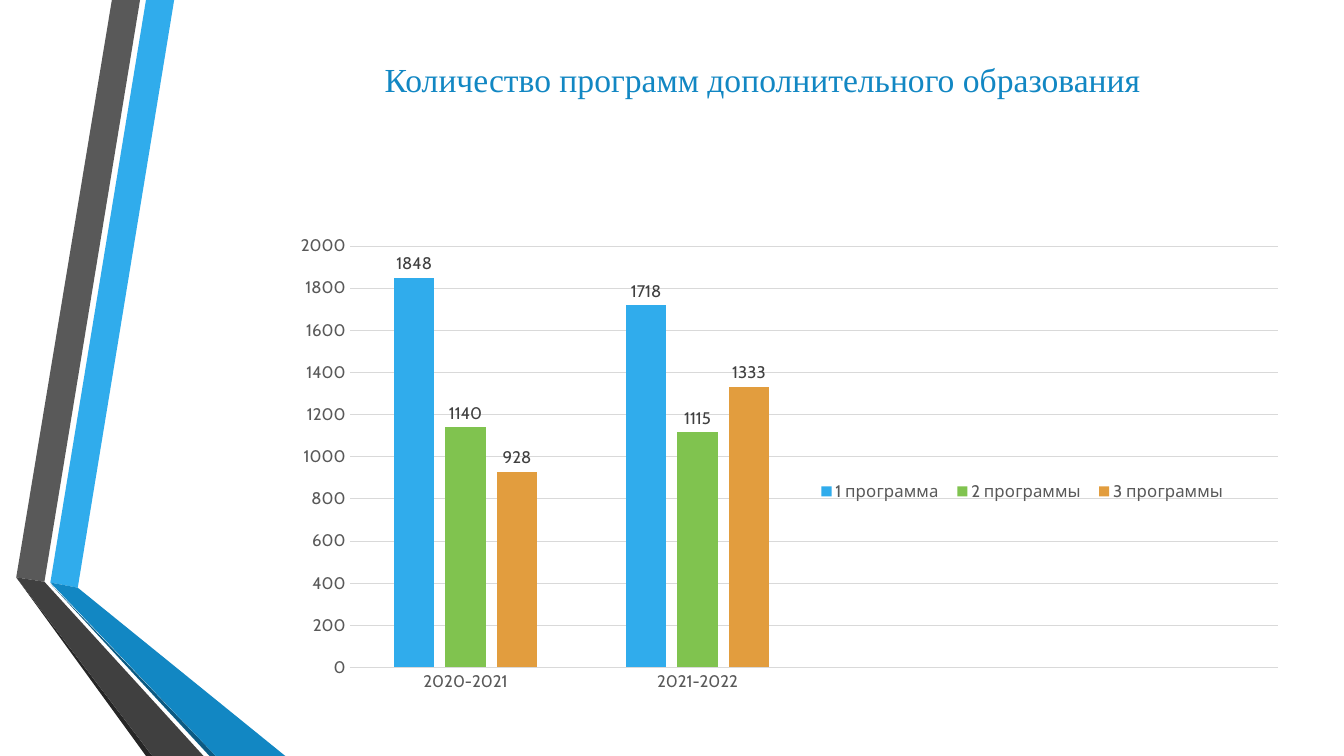
import pptx
import pptx.chart.data
import pptx.dml.color
import pptx.enum.chart
import pptx.enum.text
import pptx.oxml
import pptx.oxml.ns
import pptx.util

Cm = pptx.util.Cm
Pt = pptx.util.Pt
COLORS = {
    "blue": "30ACEC", "mid_blue": "1287C3", "deep_blue": "0C5A82",
    "gray": "595959", "dark_gray": "404040", "black_gray": "262626",
    "green": "80C34F", "orange": "E29D3E", "grid": "D9D9D9",
}


def rgb(name):
    return pptx.dml.color.RGBColor.from_string(COLORS[name])


def apply(target, values):
    for name, value in values.items():
        setattr(target, name, value)


class SlideMaker:
    chart_font = "Cabin"
    title_font = "Times New Roman"

    def __init__(self, s):
        self.s = s

    def font(self, font, name, size, color):
        apply(font, {"name": name, "size": Pt(size), "bold": False})
        font.color.rgb = rgb(color)

    def polygon(self, points, color):
        start, *rest = [(Cm(x), Cm(y)) for x, y in points]
        builder = self.s.shapes.build_freeform(*start)
        builder.add_line_segments(rest, close=True)
        sp = builder.convert_to_shape()
        sp.shadow.inherit = False
        sp.fill.solid()
        sp.fill.fore_color.rgb = rgb(color)
        sp.line.fill.background()

    def title(self, text, box):
        sp = self.s.shapes.add_textbox(*map(Cm, box))
        tf = sp.text_frame
        tf.word_wrap = True
        p = tf.paragraphs[0]
        p.alignment = pptx.enum.text.PP_ALIGN.CENTER
        r = p.add_run()
        r.text = text
        self.font(r.font, self.title_font, 24, "mid_blue")

    def place(self, part, index, box, inner=False):
        """Set a manual layout, in fractions of the chart area."""
        for old in part.findall(pptx.oxml.ns.qn("c:layout")):
            part.remove(old)
        target = '<c:layoutTarget val="inner"/>' if inner else ""
        modes = '<c:xMode val="edge"/><c:yMode val="edge"/>'
        sizes = "".join(f'<c:{k} val="{v}"/>' for k, v in zip("xywh", box))
        part.insert(index, pptx.oxml.parse_xml(
            f'<c:layout {pptx.oxml.ns.nsdecls("c")}><c:manualLayout>'
            f"{target}{modes}{sizes}</c:manualLayout></c:layout>"))

    def columns(self, categories, series, box, plot_box, legend_box):
        enum = pptx.enum.chart
        data = pptx.chart.data.CategoryChartData()
        data.categories = categories
        for name, values, _ in series:
            data.add_series(name, values)
        chart = self.s.shapes.add_chart(
            enum.XL_CHART_TYPE.COLUMN_CLUSTERED, *map(Cm, box), data).chart
        chart.has_title = False
        self.font(chart.font, self.chart_font, 12, "gray")

        # Columns and their labels
        plot = chart.plots[0]
        apply(plot, {"gap_width": 219, "overlap": -27,
                     "vary_by_categories": False})
        for ser, (_, _, color) in zip(plot.series, series):
            ser.format.fill.solid()
            ser.format.fill.fore_color.rgb = rgb(color)
            labels = ser.data_labels
            apply(labels, {"show_value": True,
                           "position": enum.XL_LABEL_POSITION.OUTSIDE_END})
            self.font(labels.font, self.chart_font, 12, "dark_gray")

        # Axes
        none = enum.XL_TICK_MARK.NONE
        for axis in (chart.category_axis, chart.value_axis):
            apply(axis, {"major_tick_mark": none, "minor_tick_mark": none})
            self.font(axis.tick_labels.font, self.chart_font, 12, "gray")
        apply(chart.value_axis, {"minimum_scale": 0, "maximum_scale": 2000,
                                 "major_unit": 200})
        chart.value_axis.format.line.fill.background()
        for part in (chart.category_axis, chart.value_axis.major_gridlines):
            part.format.line.width = Pt(0.75)
            part.format.line.color.rgb = rgb("grid")

        # Legend and plot area
        chart.has_legend = True
        legend = chart.legend
        apply(legend, {"position": enum.XL_LEGEND_POSITION.BOTTOM,
                       "include_in_layout": False})
        self.font(legend.font, self.chart_font, 12, "gray")
        plot_area = chart.element.find(".//" + pptx.oxml.ns.qn("c:plotArea"))
        self.place(plot_area, 0, plot_box, inner=True)
        self.place(chart.element.find(".//" + pptx.oxml.ns.qn("c:legend")),
                   1, legend_box)


def main():
    prs = pptx.Presentation()
    apply(prs, {"slide_width": Cm(33.87), "slide_height": Cm(19.05)})
    maker = SlideMaker(prs.slides.add_slide(prs.slide_layouts[6]))

    # Folded ribbons on the left
    bottom = 19.05
    ribbons = [
        ([(1.27, 14.68), (1.96, 14.81), (4.39, 0), (3.68, 0)], "blue"),
        ([(3.53, 0), (2.82, 0), (0.41, 14.55), (1.12, 14.66)], "gray"),
        ([(0.41, 14.55), (3.68, bottom), (3.84, bottom)], "black_gray"),
        ([(1.27, 14.71), (5.28, bottom), (5.44, bottom)], "deep_blue"),
        ([(1.27, 14.68), (5.44, bottom), (7.19, bottom), (1.96, 14.81)],
         "mid_blue"),
        ([(0.41, 14.55), (3.84, bottom), (5.13, bottom), (1.12, 14.66)],
         "dark_gray"),
    ]
    for points, color in ribbons:
        maker.polygon(points, color)

    # Chart, with two empty categories on the right for the legend
    maker.columns(
        ["2020-2021", "2021-2022", "", ""],
        [("1 программа", (1848, 1718, None, None), "blue"),
         ("2 программы", (1140, 1115, None, None), "green"),
         ("3 программы", (928, 1333, None, None), "orange")],
        box=(5.92, 2.24, 26.29, 15.85),
        plot_box=(0.11, 0.25, 0.89, 0.67),
        legend_box=(0.55, 0.61, 0.41, 0.06))

    # Title
    maker.title("Количество программ дополнительного образования",
                (7.95, 1.37, 22.53, 2.06))
    prs.save("out.pptx")


if __name__ == "__main__":
    main()
